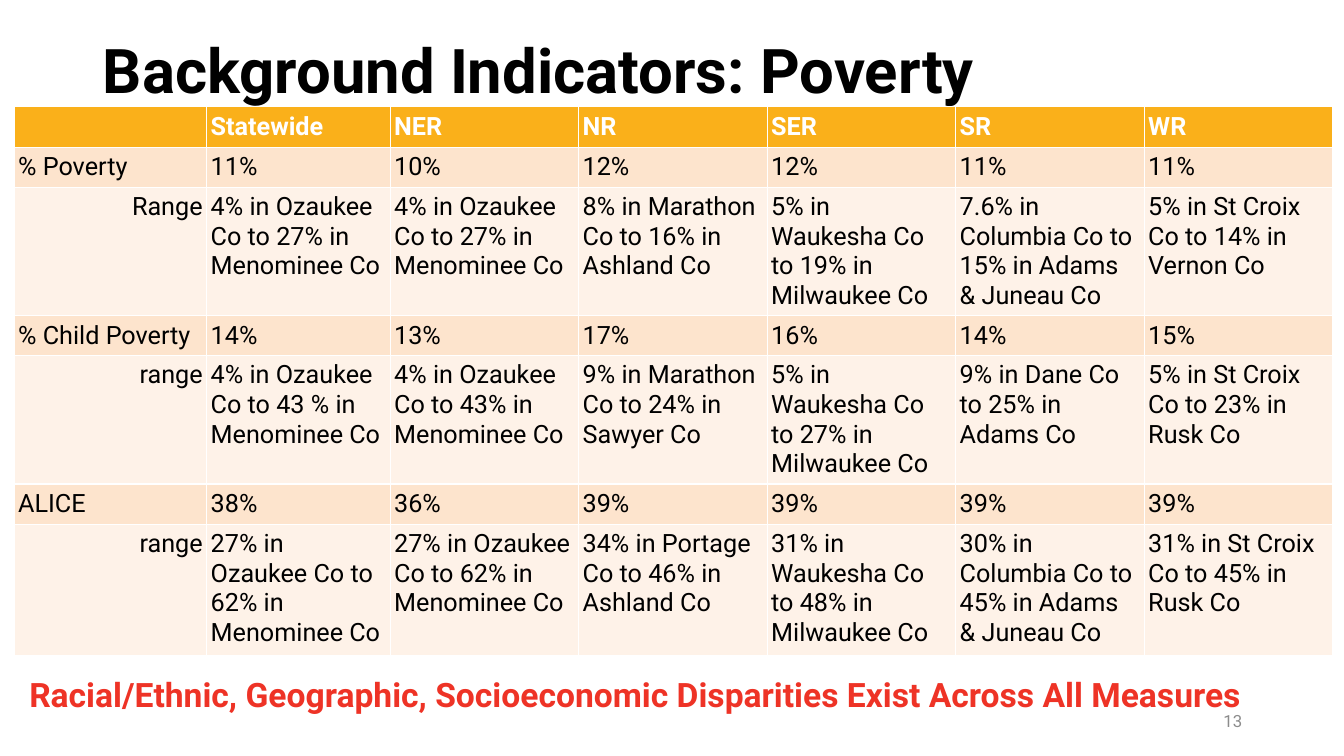
from dataclasses import dataclass

import pptx
import pptx.dml.color
import pptx.enum.text
import pptx.util

Inches = pptx.util.Inches
ALIGN = pptx.enum.text.PP_ALIGN
ANCHOR = pptx.enum.text.MSO_ANCHOR


@dataclass(frozen=True)
class Theme:
    font: str = "Roboto"
    black: str = "000000"
    white: str = "FFFFFF"
    red: str = "EE3326"
    gray: str = "8C8C8C"
    header: str = "FAB01A"
    band_dark: str = "FDE4CD"
    band_light: str = "FEF2E8"
    title: int = 44
    message: int = 24
    body: int = 18
    small: int = 12


theme = Theme()


def write(tf, text, size=theme.body, color=theme.black, bold=False,
          align=ALIGN.LEFT, anchor=ANCHOR.TOP, spacing=1.0):
    tf.word_wrap = True
    tf.vertical_anchor = anchor
    p = tf.paragraphs[0]
    p.alignment = align
    p.line_spacing = spacing
    r = p.add_run()
    r.text = text
    r.font.name = theme.font
    r.font.size = pptx.util.Pt(size)
    r.font.bold = bold
    r.font.color.rgb = pptx.dml.color.RGBColor.from_string(color)


prs = pptx.Presentation()
prs.slide_width, prs.slide_height = Inches(13.33), Inches(7.5)
s = prs.slides.add_slide(prs.slide_layouts[5])

# Title
title = s.shapes.title
title.left, title.top = Inches(0.92), Inches(0)
title.width, title.height = Inches(11.5), Inches(1.45)
write(title.text_frame, "Background Indicators: Poverty", size=theme.title,
      bold=True, anchor=ANCHOR.MIDDLE, spacing=0.9)

# Poverty table: each measure has a value row and a range row
rows = [
    ["", "Statewide", "NER", "NR", "SER", "SR", "WR"],
    ["% Poverty", "11%", "10%", "12%", "12%", "11%", "11%"],
    ["Range",
     "4% in Ozaukee Co to 27% in Menominee Co",
     "4% in Ozaukee Co to 27% in Menominee Co",
     "8% in Marathon Co to 16% in Ashland Co",
     "5% in Waukesha Co to 19% in Milwaukee Co",
     "7.6% in Columbia Co to 15% in Adams & Juneau Co",
     "5% in St Croix Co to 14% in Vernon Co"],
    ["% Child Poverty", "14%", "13%", "17%", "16%", "14%", "15%"],
    ["range",
     "4% in Ozaukee Co to 43 % in Menominee Co",
     "4% in Ozaukee Co to 43% in Menominee Co",
     "9% in Marathon Co to 24% in Sawyer Co",
     "5% in Waukesha Co to 27% in Milwaukee Co",
     "9% in Dane Co to 25% in Adams Co",
     "5% in St Croix Co to 23% in Rusk Co"],
    ["ALICE", "38%", "36%", "39%", "39%", "39%", "39%"],
    ["range",
     "27% in Ozaukee Co to 62% in Menominee Co",
     "27% in Ozaukee Co to 62% in Menominee Co",
     "34% in Portage Co to 46% in Ashland Co",
     "31% in Waukesha Co to 48% in Milwaukee Co",
     "30% in Columbia Co to 45% in Adams & Juneau Co",
     "31% in St Croix Co to 45% in Rusk Co"],
]
col_widths = [1.91, 1.82] + [1.87] * 5
row_heights = [0.4, 0.4, 1.23, 0.39, 1.19, 0.4, 1.3]
table = s.shapes.add_table(len(rows), len(col_widths), Inches(0.14), Inches(1.06),
                           Inches(sum(col_widths)), Inches(sum(row_heights))).table
for column, width in zip(table.columns, col_widths):
    column.width = Inches(width)
for row, height in zip(table.rows, row_heights):
    row.height = Inches(height)

for i, row in enumerate(rows):
    is_header = i == 0
    is_range = i > 0 and i % 2 == 0
    fill = theme.header if is_header else theme.band_light if is_range else theme.band_dark
    for j, text in enumerate(row):
        cell = table.cell(i, j)
        cell.fill.solid()
        cell.fill.fore_color.rgb = pptx.dml.color.RGBColor.from_string(fill)
        cell.margin_left = cell.margin_right = Inches(0.04)
        cell.margin_top = cell.margin_bottom = Inches(0.05)
        write(cell.text_frame, text, bold=is_header,
              color=theme.white if is_header else theme.black,
              align=ALIGN.RIGHT if is_range and j == 0 else ALIGN.LEFT)

# Key message and page number
message = s.shapes.add_textbox(Inches(0.16), Inches(6.64), Inches(12.28), Inches(0.5))
write(message.text_frame,
      "Racial/Ethnic, Geographic, Socioeconomic Disparities Exist Across All Measures",
      size=theme.message, color=theme.red, bold=True, align=ALIGN.CENTER)

page_number = s.shapes.add_textbox(Inches(9.42), Inches(6.95), Inches(3), Inches(0.4))
write(page_number.text_frame, "13", size=theme.small, color=theme.gray,
      align=ALIGN.RIGHT, anchor=ANCHOR.MIDDLE)

prs.save("out.pptx")
